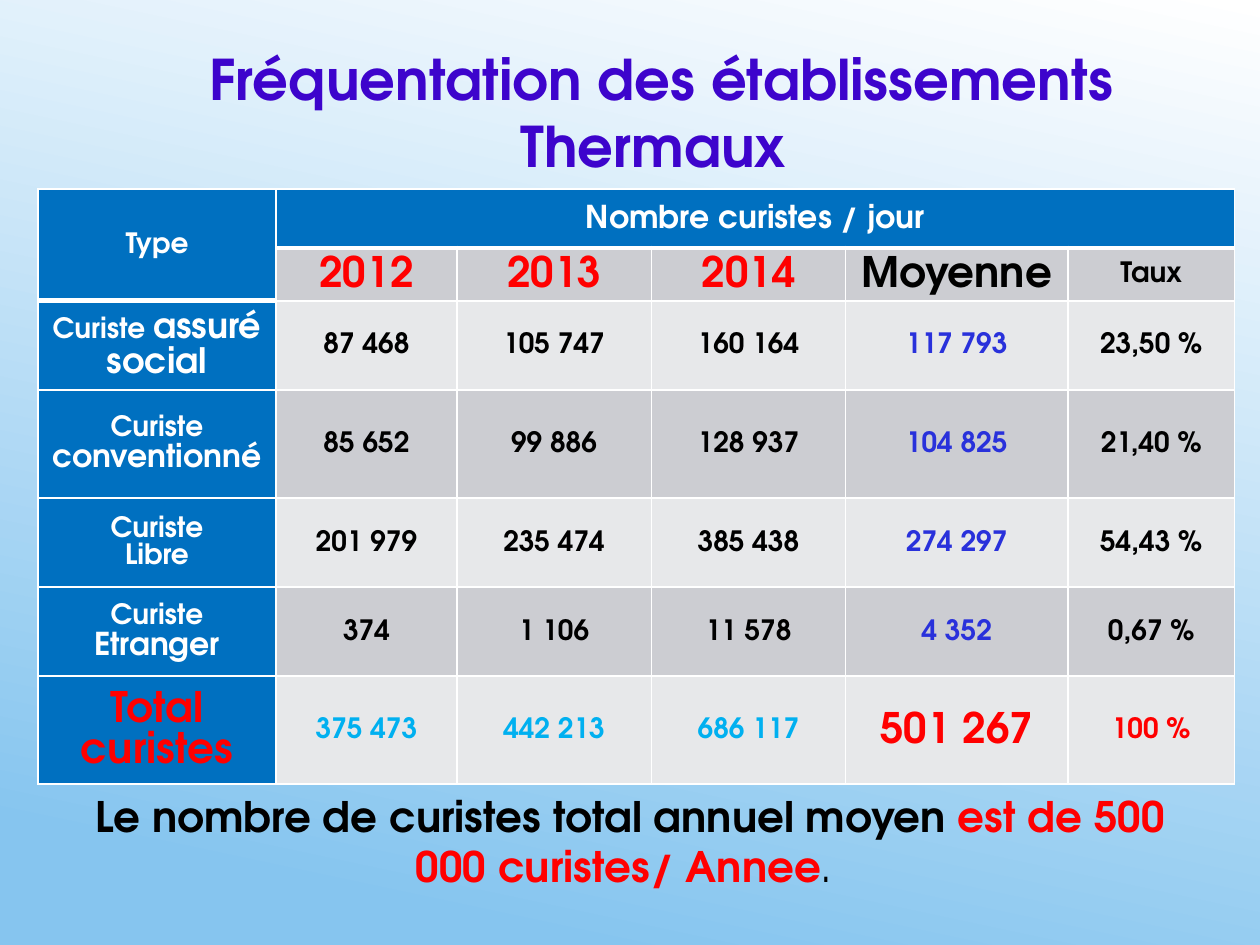
from lxml.etree import SubElement
from pptx import Presentation
from pptx.dml.color import RGBColor
from pptx.enum.text import MSO_ANCHOR, MSO_AUTO_SIZE, PP_ALIGN
from pptx.oxml.ns import qn
from pptx.util import Inches, Pt

FONT = "TeX Gyre Adventor"
WHITE = RGBColor(0xFF, 0xFF, 0xFF)
BLACK = RGBColor(0x00, 0x00, 0x00)
RED = RGBColor(0xFF, 0x00, 0x00)
SKY = RGBColor(0x86, 0xC5, 0xEF)
VIOLET = RGBColor(0x3D, 0x04, 0xCC)
HEADER_BLUE = RGBColor(0x00, 0x70, 0xC0)
AVERAGE_BLUE = RGBColor(0x29, 0x31, 0xDB)
TOTAL_BLUE = RGBColor(0x00, 0xB0, 0xF0)
BANDS = (RGBColor(0xE7, 0xE8, 0xEA), RGBColor(0xCC, 0xCD, 0xD2))

SLIDE_WIDTH, SLIDE_HEIGHT = Inches(10), Inches(7.5)
COLUMNS = (1.9, 1.44, 1.55, 1.55, 1.77, 1.33)
ROWS = (0.47, 0.42, 0.71, 0.86, 0.71, 0.71, 0.86)

# Each label is a list of paragraphs, each paragraph a list of (text, size) runs.
VISITORS = (
    ([[("Curiste ", 16), ("assuré social", 20)]],
     ("87 468", "105 747", "160 164", "117 793", "23,50 %")),
    ([[("Curiste ", 16), ("conventionné", 18)]],
     ("85 652", "99 886", "128 937", "104 825", "21,40 %")),
    ([[("Curiste", 16)], [("Libre", 16)]],
     ("201 979", "235 474", "385 438", "274 297", "54,43 %")),
    ([[("Curiste ", 16), ("Etranger", 18)]],
     ("374", "1 106", "11 578", "4 352", "0,67 %")),
)
YEARS = ("2012", "2013", "2014")
TOTALS = ("375 473", "442 213", "686 117")


def box(left, top, width, height):
    """Turn shares of the slide into a position and size."""
    return (int(left * SLIDE_WIDTH), int(top * SLIDE_HEIGHT),
            int(width * SLIDE_WIDTH), int(height * SLIDE_HEIGHT))


def style(paragraph, size, color):
    paragraph.alignment = PP_ALIGN.CENTER
    font = paragraph.font
    font.name, font.size, font.bold = FONT, Pt(size), True
    font.color.rgb = color


def set_background(slide):
    fill = slide.background.fill
    fill.gradient()
    fill.gradient_angle = 258
    for stop, color, position in zip(fill.gradient_stops, (WHITE, SKY), (0, 0.9)):
        stop.color.rgb = color
        stop.position = position


def add_title(slide, area):
    title = slide.shapes.title
    title.left, title.top, title.width, title.height = area
    frame = title.text_frame
    frame.text = "Fréquentation des établissements Thermaux\u00a0".replace("\u00a0", " ")
    frame.word_wrap = True
    frame.auto_size = MSO_AUTO_SIZE.NONE
    frame.vertical_anchor = MSO_ANCHOR.TOP
    style(frame.paragraphs[0], 32, VIOLET)


def set_borders(cell, bottom=1):
    properties = cell._tc.get_or_add_tcPr()
    sides = (("a:lnL", 1), ("a:lnR", 1), ("a:lnT", 1), ("a:lnB", bottom))
    for index, (side, width) in enumerate(sides):
        line = SubElement(properties, qn(side), w=str(Pt(width)))
        solid = SubElement(line, qn("a:solidFill"))
        SubElement(solid, qn("a:srgbClr"), val=str(WHITE))
        properties.remove(line)
        properties.insert(index, line)


def fill_cell(cell, paragraphs, color, background, bottom=1):
    cell.fill.solid()
    cell.fill.fore_color.rgb = background
    set_borders(cell, bottom)
    cell.vertical_anchor = MSO_ANCHOR.MIDDLE
    cell.margin_left = cell.margin_right = Inches(0.07)
    cell.margin_top = cell.margin_bottom = 0
    frame = cell.text_frame
    for index, runs in enumerate(paragraphs):
        paragraph = frame.add_paragraph() if index else frame.paragraphs[0]
        style(paragraph, runs[0][1], color)
        paragraph.line_spacing = 1.07
        for text, size in runs:
            run = paragraph.add_run()
            run.text = text
            run.font.size = Pt(size)


def fill_values(table, row, values):
    """Fill a row after its label with (text, size, color) values."""
    for column, (text, size, color) in enumerate(values, start=1):
        fill_cell(table.cell(row, column), [[(text, size)]], color, BANDS[row % 2])


def add_visitor_table(slide, area):
    table = slide.shapes.add_table(len(ROWS), len(COLUMNS), *area).table
    for column, share in zip(table.columns, COLUMNS):
        column.width = int(area[2] * share / sum(COLUMNS))
    for row, share in zip(table.rows, ROWS):
        row.height = int(area[3] * share / sum(ROWS))

    table.cell(0, 0).merge(table.cell(1, 0))
    table.cell(0, 1).merge(table.cell(0, len(COLUMNS) - 1))
    fill_cell(table.cell(0, 0), [[("Type", 16)]], WHITE, HEADER_BLUE, bottom=3)
    fill_cell(table.cell(0, 1), [[("Nombre curistes / jour", 18)]], WHITE,
              HEADER_BLUE, bottom=3)
    set_borders(table.cell(1, 0), bottom=3)
    for column in range(2, len(COLUMNS)):
        set_borders(table.cell(0, column), bottom=3)

    fill_values(table, 1, [(year, 24, RED) for year in YEARS]
                + [("Moyenne", 24, BLACK), ("Taux", 16, BLACK)])
    value_colors = (BLACK, BLACK, BLACK, AVERAGE_BLUE, BLACK)
    for row, (label, values) in enumerate(VISITORS, start=2):
        fill_cell(table.cell(row, 0), label, WHITE, HEADER_BLUE)
        fill_values(table, row, [(value, 16, color)
                                 for value, color in zip(values, value_colors)])
    last = len(ROWS) - 1
    fill_cell(table.cell(last, 0), [[("Total curistes", 24)]], RED, HEADER_BLUE)
    fill_values(table, last, [(total, 16, TOTAL_BLUE) for total in TOTALS]
                + [("501 267", 24, RED), ("100 %", 16, RED)])


def add_conclusion(slide, area):
    frame = slide.shapes.add_textbox(*area).text_frame
    frame.word_wrap = True
    paragraph = frame.paragraphs[0]
    style(paragraph, 24, BLACK)
    for text, color, bold in (
            ("Le nombre de curistes total annuel moyen ", BLACK, True),
            ("est de 500 000 curistes/ Annee", RED, True),
            (". ", BLACK, False)):
        run = paragraph.add_run()
        run.text = text
        run.font.color.rgb = color
        run.font.bold = bold


def main():
    presentation = Presentation()
    presentation.slide_width = SLIDE_WIDTH
    presentation.slide_height = SLIDE_HEIGHT
    slide = presentation.slides.add_slide(presentation.slide_layouts[5])
    set_background(slide)
    add_title(slide, box(0.09, 0.04, 0.87, 0.16))
    add_visitor_table(slide, box(0.03, 0.2, 0.95, 0.63))
    add_conclusion(slide, box(0.06, 0.83, 0.88, 0.12))
    presentation.save("out.pptx")


if __name__ == "__main__":
    main()
